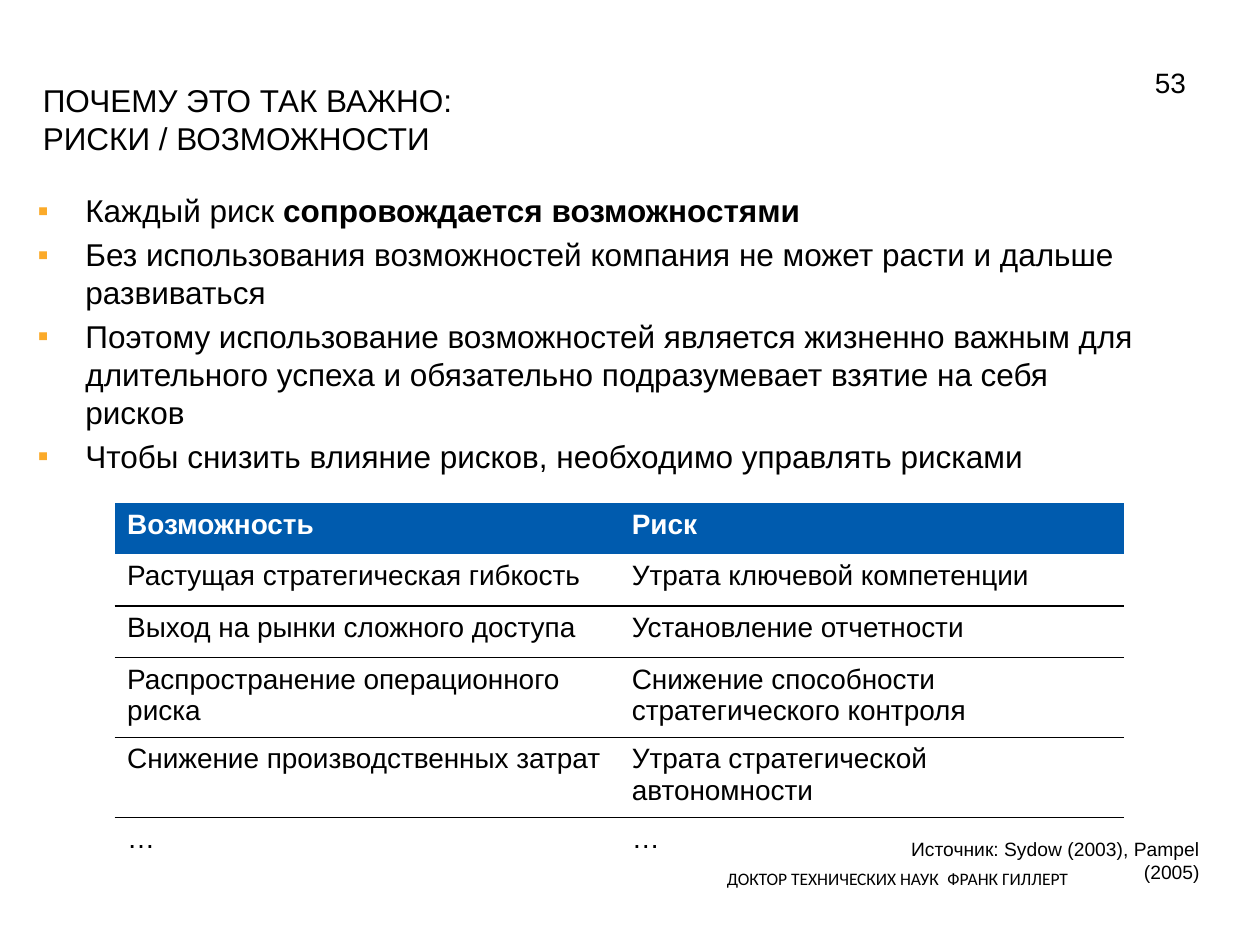
from lxml.etree import SubElement
from pptx import Presentation
from pptx.dml.color import RGBColor
from pptx.enum.text import MSO_ANCHOR, PP_ALIGN
from pptx.oxml.ns import qn
from pptx.util import Inches, Pt

BLACK = RGBColor(0x00, 0x00, 0x00)
WHITE = RGBColor(0xFF, 0xFF, 0xFF)
BLUE = RGBColor(0x00, 0x5B, 0xAE)
ORANGE = RGBColor(0xFB, 0xAA, 0x29)
WIDTH, HEIGHT = Inches(10), Inches(7.5)
NO_STYLE = "{2D5ABB26-0587-4C30-8999-92F81FD0307C}"

HEADING = "ПОЧЕМУ ЭТО ТАК ВАЖНО:\vРИСКИ / ВОЗМОЖНОСТИ"
NUMBER = "53"
SOURCE = "Источник: Sydow (2003), Pampel (2005)"
AUTHOR = ("ДОКТОР ТЕХНИЧЕСКИХ НАУК", "ФРАНК ГИЛЛЕРТ")
POINTS = [
    ("Каждый риск ", "сопровождается возможностями"),
    ("Без использования возможностей компания не может расти и дальше развиваться", ""),
    ("Поэтому использование возможностей является жизненно важным для длительного "
     "успеха и обязательно подразумевает взятие на себя рисков", ""),
    ("Чтобы снизить влияние рисков, необходимо управлять рисками", ""),
]
COMPARISON = [
    ("Возможность", "Риск"),
    ("Растущая стратегическая гибкость", "Утрата ключевой компетенции"),
    ("Выход на рынки сложного доступа", "Установление отчетности"),
    ("Распространение операционного риска", "Снижение способности стратегического контроля"),
    ("Снижение производственных затрат", "Утрата стратегической автономности"),
    ("…", "…"),
]
AREAS = {
    "heading": (0.024, 0.077, 0.812, 0.097),
    "points": (0.02, 0.196, 0.9, 0.605),
    "comparison": (0.091, 0.532, 0.801, 0.328),
    "author": (0.567, 0.897, 0.408, 0.059),
    "source": (0.672, 0.879, 0.29, 0.039),
    "number": (0.717, 0.053, 0.234, 0.069),
}


def area(part):
    left, top, width, height = AREAS[part]
    return int(left * WIDTH), int(top * HEIGHT), int(width * WIDTH), int(height * HEIGHT)


def write(paragraph, text, size=18, color=BLACK, bold=False, font="Arial", align=PP_ALIGN.LEFT):
    paragraph.alignment = align
    for index, line in enumerate(text.split("\v")):
        if index:
            paragraph.add_line_break()
            gap = paragraph._p.findall(qn("a:br"))[-1]
            SubElement(gap, qn("a:rPr"), sz=str(size * 100))
        run = paragraph.add_run()
        run.text = line
        run.font.size, run.font.name, run.font.bold = Pt(size), font, bold
        run.font.color.rgb = color


def add_frame(slide, part, anchor=MSO_ANCHOR.TOP):
    frame = slide.shapes.add_textbox(*area(part)).text_frame
    frame.word_wrap = True
    frame.vertical_anchor = anchor
    return frame


def add_bullet(paragraph):
    properties = paragraph._p.get_or_add_pPr()
    properties.set("marL", str(Inches(0.38)))
    properties.set("indent", str(-Inches(0.38)))
    paragraph.space_before = Pt(3.5)
    tint = SubElement(properties, qn("a:buClr"))
    SubElement(tint, qn("a:srgbClr"), val=str(ORANGE))
    SubElement(properties, qn("a:buFont"), typeface="Arial")
    SubElement(properties, qn("a:buChar"), char="▪")


def add_rule(cell, side):
    rule = SubElement(cell._tc.get_or_add_tcPr(), qn(f"a:{side}"), w=str(Pt(1)))
    SubElement(SubElement(rule, qn("a:solidFill")), qn("a:srgbClr"), val=str(BLACK))


def add_comparison(slide):
    table = slide.shapes.add_table(len(COMPARISON), 2, *area("comparison")).table
    table._tbl.tblPr.find(qn("a:tableStyleId")).text = NO_STYLE
    last = len(COMPARISON) - 1
    for row, entries in enumerate(COMPARISON):
        table.rows[row].height = Inches(0.41)
        for column, entry in enumerate(entries):
            cell = table.cell(row, column)
            header = row == 0
            write(cell.text_frame.paragraphs[0], entry, size=16, bold=header,
                  color=WHITE if header else BLACK)
            if row > 1:
                add_rule(cell, "lnT")
            if 0 < row < last:
                add_rule(cell, "lnB")
            if header:
                cell.fill.solid()
                cell.fill.fore_color.rgb = BLUE
            else:
                cell.fill.background()


def main():
    """Build the slide on risks and opportunities."""
    deck = Presentation()
    deck.slide_width, deck.slide_height = WIDTH, HEIGHT
    slide = deck.slides.add_slide(deck.slide_layouts[5])

    author = add_frame(slide, "author").paragraphs[0]
    write(author, AUTHOR[0], size=10, font="Calibri")
    write(author, " ")
    write(author, AUTHOR[1], size=10, font="Calibri")

    heading = slide.shapes.title
    heading.left, heading.top, heading.width, heading.height = area("heading")
    heading.text_frame.vertical_anchor = MSO_ANCHOR.MIDDLE
    write(heading.text_frame.paragraphs[0], HEADING)

    points = add_frame(slide, "points")
    for index, (plain, strong) in enumerate(POINTS):
        point = points.add_paragraph() if index else points.paragraphs[0]
        add_bullet(point)
        write(point, plain)
        if strong:
            write(point, strong, bold=True)

    add_comparison(slide)
    write(add_frame(slide, "source").paragraphs[0], SOURCE, size=11, align=PP_ALIGN.RIGHT)
    write(add_frame(slide, "number", MSO_ANCHOR.MIDDLE).paragraphs[0], NUMBER,
          size=16, align=PP_ALIGN.RIGHT)
    deck.save("out.pptx")


if __name__ == "__main__":
    main()
